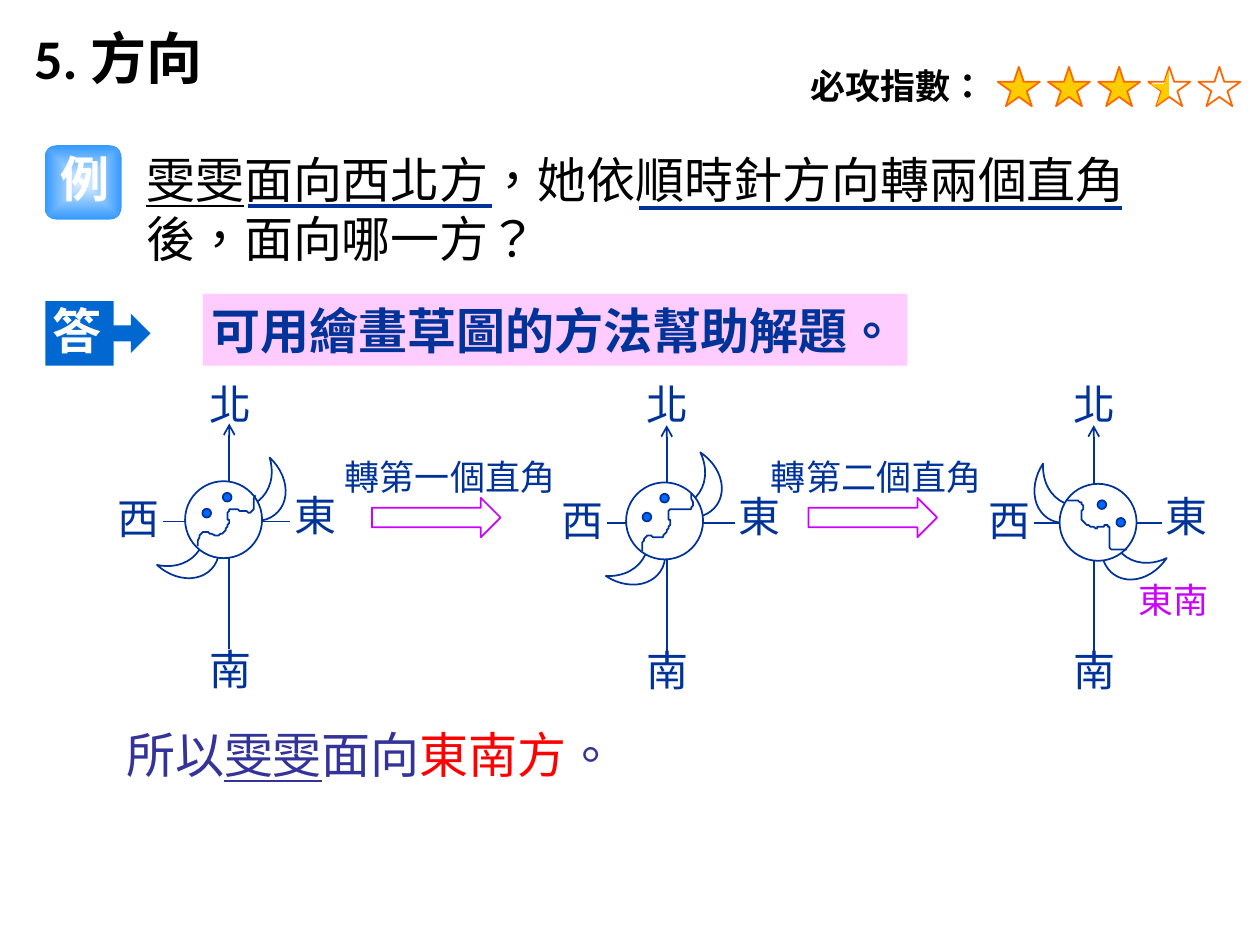
import math

from lxml import etree
from pptx import Presentation
from pptx import util as u
from pptx.dml.color import RGBColor
from pptx.enum import shapes, text
from pptx.oxml import parse_xml
from pptx.oxml.ns import qn

Pt = u.Pt
SHAPE = shapes.MSO_SHAPE
CJK = "Noto Sans CJK SC"
COLORS = {
    "black": "000000", "white": "FFFFFF", "navy": "003399", "indigo": "333399",
    "red": "FF0000", "violet": "CC00FF", "blue": "0068D0", "eye": "0066FF",
    "orange": "FF6600", "gold": "FFCC00", "pink": "FFCCFF",
    "pale": "E5F2FF", "sky": "3399FF",
}

# Face geometry around the head's centre: the mouth is a chain of cubic curves
HORNS = [(-22, -12.6), (16.2, 19.8)]
EYES = [(2.2, -10.1), (13, 0)]
MOUTH = [
    (-17.6, -12.6), (-14, -12.6), (-10.4, -12.6), (-9, -10.4),
    (-7.6, -9), (-10.4, -4), (-9, -1.1), (-7.6, 1.1), (-4, 2.5), (-1.8, 3.2),
    (-0.4, 4), (-0.4, 2.5), (1.1, 2.5), (2.5, 2.5), (5.4, 1.1), (6.1, 2.5),
    (6.8, 4), (6.8, 8.3), (6.8, 10.4), (6.8, 12.6), (6.1, 14.8), (7.6, 15.5),
    (9, 16.2), (12.6, 15.5), (16.2, 15.5),
]


def rgb(name):
    return RGBColor.from_string(COLORS[name])


def paint(shape, fill=None, line=None):
    shape.shadow.inherit = False
    if fill:
        shape.fill.solid()
        shape.fill.fore_color.rgb = rgb(fill)
    else:
        shape.fill.background()
    if line:
        shape.line.color.rgb = rgb(line)
        shape.line.width = Pt(1)
    else:
        shape.line.fill.background()


def add_preset(slide, kind, box, fill=None, line=None, rotation=0, adjustments=()):
    shape = slide.shapes.add_shape(kind, *map(Pt, box))
    paint(shape, fill, line)
    shape.rotation = rotation
    for index, value in enumerate(adjustments):
        shape.adjustments[index] = value
    return shape


def add_outline(slide, points, closed, fill=None, line=None):
    builder = slide.shapes.build_freeform(*points[0], scale=Pt(1))
    builder.add_line_segments(points[1:], close=closed)
    paint(builder.convert_to_shape(), fill, line)


def add_line(slide, start, end, width=1, arrow=False):
    connector = slide.shapes.add_connector(
        shapes.MSO_CONNECTOR.STRAIGHT, *map(Pt, (*start, *end)))
    connector.line.color.rgb = rgb("navy")
    connector.line.width = Pt(width)
    if arrow:
        etree.SubElement(connector.line._get_or_add_ln(), qn("a:tailEnd"), type="arrow")
    etree.SubElement(connector._element.spPr, qn("a:effectLst"))


def write(shape, runs, size, color, font="Arial", bold=False, spacing=None,
          align=text.PP_ALIGN.LEFT, **frame_format):
    """Write runs, each a string or a (string, font format) pair."""
    frame = shape.text_frame
    settings = {"word_wrap": True, "vertical_anchor": text.MSO_ANCHOR.TOP}
    for name, value in (settings | frame_format).items():
        setattr(frame, name, value)
    paragraph = frame.paragraphs[0]
    paragraph.alignment = align
    if spacing:
        paragraph.line_spacing = Pt(spacing)
    for item in runs:
        words, changes = (item, {}) if isinstance(item, str) else item
        run = paragraph.add_run()
        run.text = words
        values = {"name": font, "size": Pt(size), "bold": bold, "color": color} | changes
        run.font.color.rgb = rgb(values.pop("color"))
        for name, value in values.items():
            setattr(run.font, name, value)
        properties = run._r.get_or_add_rPr()
        properties.set("lang", "zh-TW")
        properties.find(qn("a:latin")).addnext(
            properties.makeelement(qn("a:ea"), {"typeface": CJK}))


def add_text(slide, box, runs, size, color, **options):
    write(slide.shapes.add_textbox(*map(Pt, box)), runs, size, color, **options)


def fill_from_centre(shape, inner, outer):
    gradient = parse_xml(
        '<a:gradFill xmlns:a="http://schemas.openxmlformats.org/drawingml/2006/main">'
        f'<a:gsLst><a:gs pos="0"><a:srgbClr val="{COLORS[inner]}"/></a:gs>'
        f'<a:gs pos="100000"><a:srgbClr val="{COLORS[outer]}"/></a:gs></a:gsLst>'
        '<a:path path="shape"><a:fillToRect l="50000" t="50000" r="50000" b="50000"/>'
        '</a:path></a:gradFill>')
    properties = shape._element.spPr
    properties.replace(properties.find(qn("a:solidFill")), gradient)


def add_rating(slide):
    left, top, pitch = 570.2, 38.2, 28.65
    for index in range(5):
        add_preset(slide, SHAPE.STAR_5_POINT, (left + index * pitch, top, 24, 22.5),
                   "gold" if index < 3 else "white", "orange")
    half_star = [(668.2, 55.4), (668.2, 39.6), (665.3, 47.5), (656.6, 47.5),
                 (663.8, 51.8), (661, 60.5)]
    add_outline(slide, half_star, True, "gold")


def add_compass(slide, axis, west, row):
    east = west + 73
    add_line(slide, (axis, row + 73), (axis, row - 56), arrow=True)
    add_line(slide, (west, row), (east, row))
    labels = {"北": (axis - 18.5, 212.5), "南": (axis - 18.5, row + 66),
              "西": (west - 33, row - 20), "東": (east - 5, row - 22)}
    for label, corner in labels.items():
        add_text(slide, (*corner, 53, 36), [label], 24, "navy", font=CJK)


def add_face(slide, x, y, angle):
    cosine, sine = math.cos(math.radians(angle)), math.sin(math.radians(angle))

    def turn(point):
        return (x + point[0] * cosine - point[1] * sine,
                y + point[0] * sine + point[1] * cosine)

    def add_part(kind, centre, width, height, fill, rotation=0, adjustments=()):
        part_x, part_y = turn(centre)
        box = (part_x - width / 2, part_y - height / 2, width, height)
        add_preset(slide, kind, box, fill, "navy", rotation, adjustments)

    for horn in HORNS:
        add_part(SHAPE.MOON, horn, 24.5, 39, "white", (angle + 303.6) % 360, [0.5])
    add_part(SHAPE.OVAL, (0, 0), 44, 44, "white")
    curve = [MOUTH[0]]
    for index in range(0, len(MOUTH) - 1, 3):
        controls = MOUTH[index:index + 4]
        for step in range(1, 9):
            t = step / 8
            weights = [math.comb(3, k) * t**k * (1 - t)**(3 - k) for k in range(4)]
            curve.append(tuple(sum(w * c[axis] for w, c in zip(weights, controls))
                               for axis in (0, 1)))
    add_outline(slide, [turn(point) for point in curve], False, line="navy")
    for eye in EYES:
        add_part(SHAPE.OVAL, eye, 5, 5, "eye")


def main():
    presentation = Presentation()
    presentation.slide_width, presentation.slide_height = Pt(720), Pt(540)
    slide = presentation.slides.add_slide(presentation.slide_layouts[6])
    centred = {"align": text.PP_ALIGN.CENTER, "bold": True, "spacing": 30}

    # Heading and rating
    add_text(slide, (12.5, 10, 189, 59), ["5. 方向"], 32, "black", font="Calibri", bold=True)
    add_text(slide, (456, 35.5, 143, 34), ["必攻指數："], 20, "black", bold=True, spacing=21.6)
    add_rating(slide)

    # Question
    badge = add_preset(slide, SHAPE.ROUNDED_RECTANGLE, (25.5, 83, 44, 42.5), "sky")
    fill_from_centre(badge, "pale", "sky")
    write(badge, ["例"], 28, "white", font=CJK, **centred)
    add_text(slide, (76.5, 82, 584, 74),
             [("雯雯", {"underline": True}), "面向西北方，她依順時針方向轉兩個直角後，面向哪一方？"],
             28, "black")
    add_line(slide, (142, 117.5), (281, 117.5), 2.25)
    add_line(slide, (365, 119), (641, 119), 2.25)

    # Answer and method
    callout = add_preset(slide, SHAPE.RIGHT_ARROW_CALLOUT, (26, 172, 60, 37), "blue",
                         adjustments=[0.25, 0.304, 0.304, 0.65])
    write(callout, ["答"], 28, "white", word_wrap=False, margin_left=Pt(4.3),
          vertical_anchor=text.MSO_ANCHOR.MIDDLE, **centred)
    method = add_preset(slide, SHAPE.RECTANGLE, (116, 168, 402.5, 41), "pink")
    write(method, ["可用繪畫草圖的方法幫助解題。"], 28, "navy", bold=True,
          margin_left=Pt(5), margin_right=0)

    # Compasses with the turning face
    for compass in [(131, 93, 298), (381, 347, 299), (625, 591, 299)]:
        add_compass(slide, *compass)
    for face in [(127.8, 297, -81), (379.8, 297.7, -90), (627.5, 298.5, 0)]:
        add_face(slide, *face)

    # Turns between the compasses
    for label, label_left, arrow_left in [("轉第一個直角", 190, 212.5), ("轉第二個直角", 433.5, 462)]:
        add_preset(slide, SHAPE.RIGHT_ARROW, (arrow_left, 284.5, 73.5, 22.5), line="violet")
        add_text(slide, (label_left, 256.5, 185, 31), [label], 20, "navy", font=CJK)
    add_text(slide, (643.5, 327, 73.5, 31), ["東南"], 20, "violet", font=CJK)

    # Conclusion
    add_text(slide, (65, 410.5, 295, 41),
             ["所以", ("雯雯", {"underline": True}), "面向", ("東南方", {"color": "red"}), "。"],
             28, "indigo")
    presentation.save("out.pptx")


if __name__ == "__main__":
    main()
